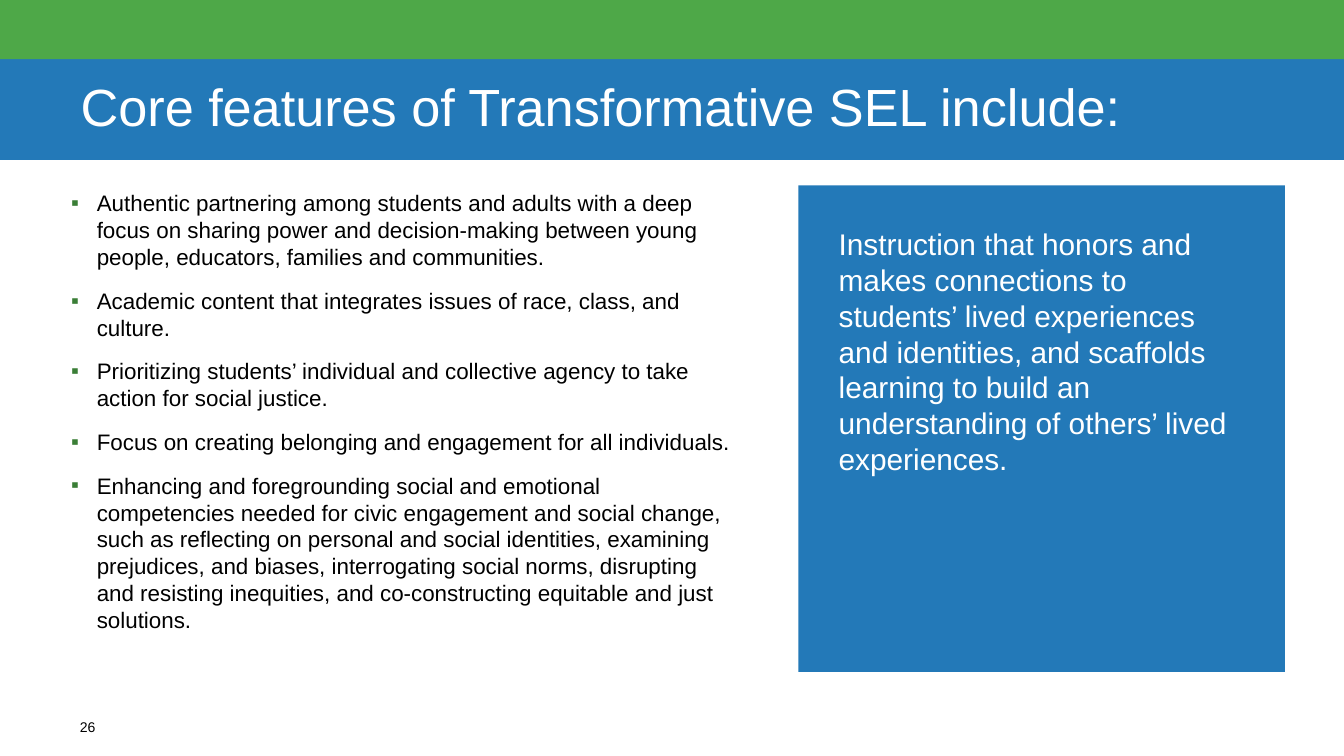
from dataclasses import dataclass

from lxml.etree import SubElement
from pptx import Presentation
from pptx.dml.color import RGBColor
from pptx.enum.shapes import MSO_SHAPE as Shape
from pptx.enum.text import MSO_ANCHOR as Anchor, MSO_AUTO_SIZE as AutoSize, PP_ALIGN as Align
from pptx.oxml.ns import qn
from pptx.util import Inches, Pt

GREEN = "4EA848"
BLUE = "2379B8"
BULLET_GREEN = "3A7E36"
WHITE = "FFFFFF"
BLACK = "000000"
SLIDE_WIDTH = 10
SLIDE_HEIGHT = SLIDE_WIDTH * 9 / 16
BAND_HEIGHT = 0.44
INDENT = 0.19

FEATURES = [
    "Authentic partnering among students and adults with a deep focus on sharing power and "
    "decision-making between young people, educators, families and communities.",
    "Academic content that integrates issues of race, class, and culture.",
    "Prioritizing students’ individual and collective agency to take action for social justice.",
    "Focus on creating belonging and engagement for all individuals.",
    "Enhancing and foregrounding social and emotional competencies needed for civic engagement "
    "and social change, such as reflecting on personal and social identities, examining "
    "prejudices, and biases, interrogating social norms, disrupting and resisting inequities, "
    "and co-constructing equitable and just solutions.",
]
INSTRUCTION = (
    "Instruction that honors and makes connections to students’ lived experiences and "
    "identities, and scaffolds learning to build an understanding of others’ lived experiences."
)


@dataclass
class TextBlock:
    box: tuple[float, float, float, float]
    paragraphs: list[str]
    size: float
    color: str
    inset_x: float = 0
    inset_y: float = 0
    fill: str | None = None
    bulleted: bool = False
    anchor: Anchor = Anchor.TOP
    align: Align = Align.LEFT
    line_spacing: float = 1.0
    gap: float = 4.5


def rgb(color: str) -> RGBColor:
    return RGBColor.from_string(color)


def paint(shape, color: str) -> None:
    shape.fill.solid()
    shape.fill.fore_color.rgb = rgb(color)


def set_bullet(paragraph, bulleted: bool) -> None:
    properties = paragraph._p.get_or_add_pPr()
    indent = Inches(INDENT) if bulleted else 0
    properties.set("marL", str(indent))
    properties.set("indent", str(-indent))
    if bulleted:
        bullet_color = SubElement(properties, qn("a:buClr"))
        SubElement(bullet_color, qn("a:srgbClr"), val=BULLET_GREEN)
        SubElement(properties, qn("a:buChar"), char="▪")
    else:
        SubElement(properties, qn("a:buNone"))


def write_block(shape, block: TextBlock) -> None:
    shape.left, shape.top, shape.width, shape.height = map(Inches, block.box)
    if block.fill:
        paint(shape, block.fill)
    frame = shape.text_frame
    frame.word_wrap = True
    frame.auto_size = AutoSize.NONE
    frame.vertical_anchor = block.anchor
    frame.margin_left = frame.margin_right = Inches(block.inset_x)
    frame.margin_top = frame.margin_bottom = Inches(block.inset_y)
    frame.text = "\n".join(block.paragraphs)
    for position, paragraph in enumerate(frame.paragraphs):
        set_bullet(paragraph, block.bulleted)
        paragraph.alignment = block.align
        paragraph.line_spacing = block.line_spacing
        paragraph.space_before = Pt(block.gap if position else 0)
        paragraph.space_after = Pt(block.gap)
        paragraph.font.name = "Arial"
        paragraph.font.size = Pt(block.size)
        paragraph.font.color.rgb = rgb(block.color)


def main() -> None:
    deck = Presentation()
    deck.slide_width, deck.slide_height = Inches(SLIDE_WIDTH), Inches(SLIDE_HEIGHT)
    slide = deck.slides.add_slide(deck.slide_layouts[3])
    heading, features, instruction = slide.placeholders

    band = slide.shapes.add_shape(Shape.RECTANGLE, 0, 0, deck.slide_width, Inches(BAND_HEIGHT))
    band.shadow.inherit = False
    band.line.fill.background()
    paint(band, GREEN)

    write_block(heading, TextBlock(
        (0, BAND_HEIGHT, SLIDE_WIDTH, 0.75), ["Core features of Transformative SEL include:"],
        28, WHITE, inset_x=0.6, fill=BLUE, anchor=Anchor.MIDDLE, line_spacing=0.9, gap=0))
    write_block(features, TextBlock((0.53, 1.41, 4.94, 3.62), FEATURES, 12, BLACK, bulleted=True))
    write_block(instruction, TextBlock(
        (5.94, 1.38, 3.62, 3.62), [INSTRUCTION], 16, WHITE, inset_x=0.3, inset_y=0.3, fill=BLUE))

    page_number = slide.shapes.add_textbox(0, 0, 0, 0)
    write_block(page_number, TextBlock(
        (0.44, 5.31, 0.37, 0.19), ["26"], 7.5, BLACK, inset_x=0.1, inset_y=0.1,
        anchor=Anchor.MIDDLE, align=Align.RIGHT, gap=0))

    deck.save("out.pptx")


if __name__ == "__main__":
    main()
